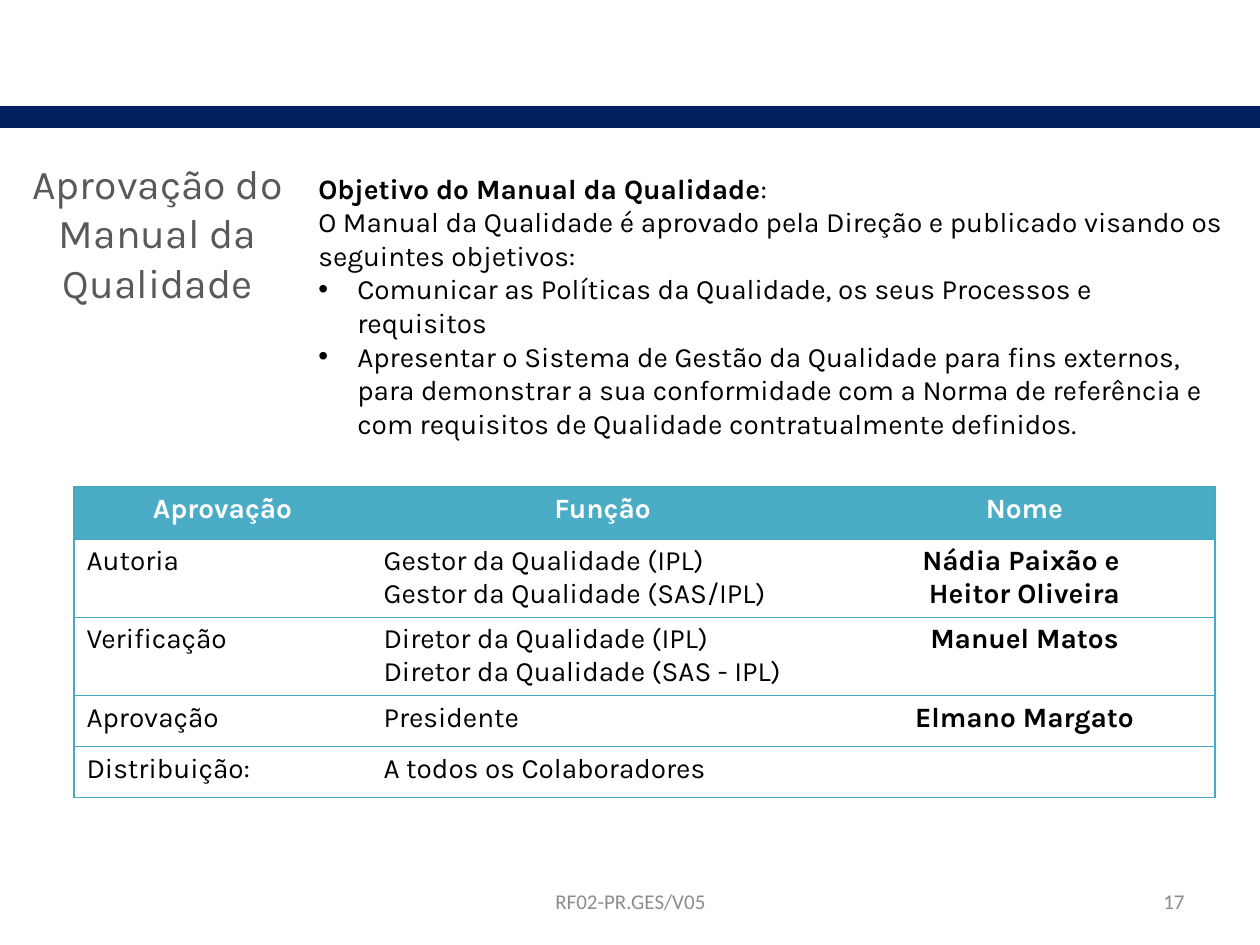
from dataclasses import dataclass

import pptx
import pptx.dml.color
import pptx.enum.shapes
import pptx.enum.text
import pptx.oxml
import pptx.oxml.ns
import pptx.util

ALIGN = pptx.enum.text.PP_ALIGN
ANCHOR = pptx.enum.text.MSO_ANCHOR


@dataclass(frozen=True)
class Theme:
    navy: str = "002060"
    header: str = "4BACC6"
    border: str = "46AAC5"
    white: str = "FFFFFF"
    black: str = "000000"
    title: str = "595959"
    footer: str = "8C8C8C"
    body_font: str = "Karla"
    footer_font: str = "Calibri"
    title_size: float = 23.4
    body_size: float = 16
    footer_size: float = 12
    border_width: float = 0.75


@dataclass(frozen=True)
class Box:
    x: int
    y: int
    w: int
    h: int


@dataclass(frozen=True)
class Style:
    font: str
    size: float
    color: str
    bold: bool = False


@dataclass(frozen=True)
class Run:
    text: str
    style: Style


@dataclass(frozen=True)
class Para:
    runs: tuple[Run, ...]
    align: ALIGN = ALIGN.LEFT
    bullet: bool = False


@dataclass(frozen=True)
class TextBox:
    box: Box
    paras: tuple[Para, ...]
    anchor: ANCHOR = ANCHOR.MIDDLE


T = Theme()
BODY = Style(T.body_font, T.body_size, T.black)
BOLD = Style(T.body_font, T.body_size, T.black, True)
HEAD = Style(T.body_font, T.body_size, T.white, True)
TITLE = Style(T.body_font, T.title_size, T.title)
FOOTER = Style(T.footer_font, T.footer_size, T.footer)


def px(n: int) -> int:
    return round(n * 914400 / 126)


def rgb(color: str) -> pptx.dml.color.RGBColor:
    return pptx.dml.color.RGBColor.from_string(color)


def line(text: str, style: Style = BODY, align: ALIGN = ALIGN.LEFT, bullet: bool = False) -> Para:
    return Para((Run(text, style),), align, bullet)


def add_bullet(p) -> None:
    pPr = p._p.get_or_add_pPr()
    pPr.set("marL", str(px(39)))
    pPr.set("indent", str(-px(39)))
    ns = pptx.oxml.ns.nsdecls("a")
    pPr.append(pptx.oxml.parse_xml(f'<a:buFont {ns} typeface="Arial"/>'))
    pPr.append(pptx.oxml.parse_xml(f'<a:buChar {ns} char="•"/>'))


def write(tf, paras: tuple[Para, ...]) -> None:
    for i, para in enumerate(paras):
        p = tf.add_paragraph() if i else tf.paragraphs[0]
        p.alignment = para.align
        if para.bullet:
            add_bullet(p)
        for run in para.runs:
            r = p.add_run()
            r.text = run.text
            r.font.name = run.style.font
            r.font.size = pptx.util.Pt(run.style.size)
            r.font.bold = run.style.bold
            r.font.color.rgb = rgb(run.style.color)


def draw_text(s, item: TextBox) -> None:
    b = item.box
    tf = s.shapes.add_textbox(px(b.x), px(b.y), px(b.w), px(b.h)).text_frame
    tf.word_wrap = True
    tf.vertical_anchor = item.anchor
    write(tf, item.paras)


def draw_band(s, b: Box) -> None:
    sp = s.shapes.add_shape(
        pptx.enum.shapes.MSO_SHAPE.RECTANGLE, px(b.x), px(b.y), px(b.w), px(b.h))
    sp.shadow.inherit = False
    sp.fill.solid()
    sp.fill.fore_color.rgb = rgb(T.navy)
    sp.line.color.rgb = rgb(T.navy)
    sp.line.width = pptx.util.Pt(2)


def set_borders(cell, sides: str) -> None:
    tcPr = cell._tc.get_or_add_tcPr()
    ns = pptx.oxml.ns.nsdecls("a")
    solid = f'<a:solidFill><a:srgbClr val="{T.border}"/></a:solidFill>'
    width = pptx.util.Pt(T.border_width)
    for side in "LRTB":
        paint = solid if side in sides else "<a:noFill/>"
        tcPr.append(pptx.oxml.parse_xml(f'<a:ln{side} {ns} w="{width}">{paint}</a:ln{side}>'))


def draw_table(s, x: int, y: int, cols: tuple[int, ...], heights: tuple[int, ...],
               rows: tuple[tuple[tuple[Para, ...], ...], ...]) -> None:
    table = s.shapes.add_table(
        len(rows), len(cols), px(x), px(y), px(sum(cols)), px(sum(heights))).table
    table.horz_banding = False
    for col, w in zip(table.columns, cols):
        col.width = px(w)
    for row, h in zip(table.rows, heights):
        row.height = px(h)
    last = len(cols) - 1
    for i, row in enumerate(rows):
        if len(row) < len(cols):
            table.cell(i, len(row) - 1).merge(table.cell(i, last))
        for j in range(len(cols)):
            cell = table.cell(i, j)
            right = j == last or cell.is_merge_origin
            set_borders(cell, "TB" + ("L" if j == 0 else "") + ("R" if right else ""))
            if i == 0:
                cell.fill.solid()
                cell.fill.fore_color.rgb = rgb(T.header)
            else:
                cell.fill.background()
            if j < len(row):
                write(cell.text_frame, row[j])


def head(text: str) -> tuple[Para, ...]:
    return (line(text, HEAD, ALIGN.CENTER),)


def body(*texts: str) -> tuple[Para, ...]:
    return tuple(line(t) for t in texts)


def names(*texts: str) -> tuple[Para, ...]:
    return tuple(line(t, BOLD, ALIGN.CENTER) for t in texts)


ROWS = (
    (head("Aprovação"), head("Função"), head("Nome")),
    (body("Autoria"), body("Gestor da Qualidade (IPL)", "Gestor da Qualidade (SAS/IPL)"),
     names("Nádia Paixão e ", "Heitor Oliveira")),
    (body("Verificação"), body("Diretor da Qualidade (IPL)", "Diretor da Qualidade (SAS - IPL)"),
     names("Manuel Matos")),
    (body("Aprovação"), body("Presidente"), names("Elmano Margato")),
    (body("Distribuição:"), body("A todos os Colaboradores")),
)

TEXTS = (
    TextBox(Box(4, 131, 307, 203),
            (line("Aprovação do Manual da Qualidade", TITLE, ALIGN.CENTER),)),
    TextBox(Box(903, 876, 294, 50), (line("17", FOOTER, ALIGN.RIGHT),)),
    TextBox(Box(306, 165, 930, 251), (
        Para((Run("Objetivo do Manual da Qualidade", BOLD), Run(":", BODY))),
        line("O Manual da Qualidade é aprovado pela Direção e publicado visando os "
             "seguintes objetivos:"),
        line("Comunicar as Políticas da Qualidade, os seus Processos e requisitos", bullet=True),
        line("Apresentar o Sistema de Gestão da Qualidade para fins externos, para demonstrar "
             "a sua conformidade com a Norma de referência e com requisitos de Qualidade "
             "contratualmente definidos.", bullet=True),
    ), ANCHOR.TOP),
    TextBox(Box(431, 876, 399, 50), (line("RF02-PR.GES/V05", FOOTER, ALIGN.CENTER),)),
)


def main() -> None:
    prs = pptx.Presentation()
    prs.slide_width, prs.slide_height = px(1260), px(945)
    s = prs.slides.add_slide(prs.slide_layouts[6])
    draw_band(s, Box(0, 108, 1260, 18))
    draw_table(s, 74, 487, (297, 463, 381), (52, 78, 78, 51, 51), ROWS)
    for item in TEXTS:
        draw_text(s, item)
    prs.save("out.pptx")


if __name__ == "__main__":
    main()
